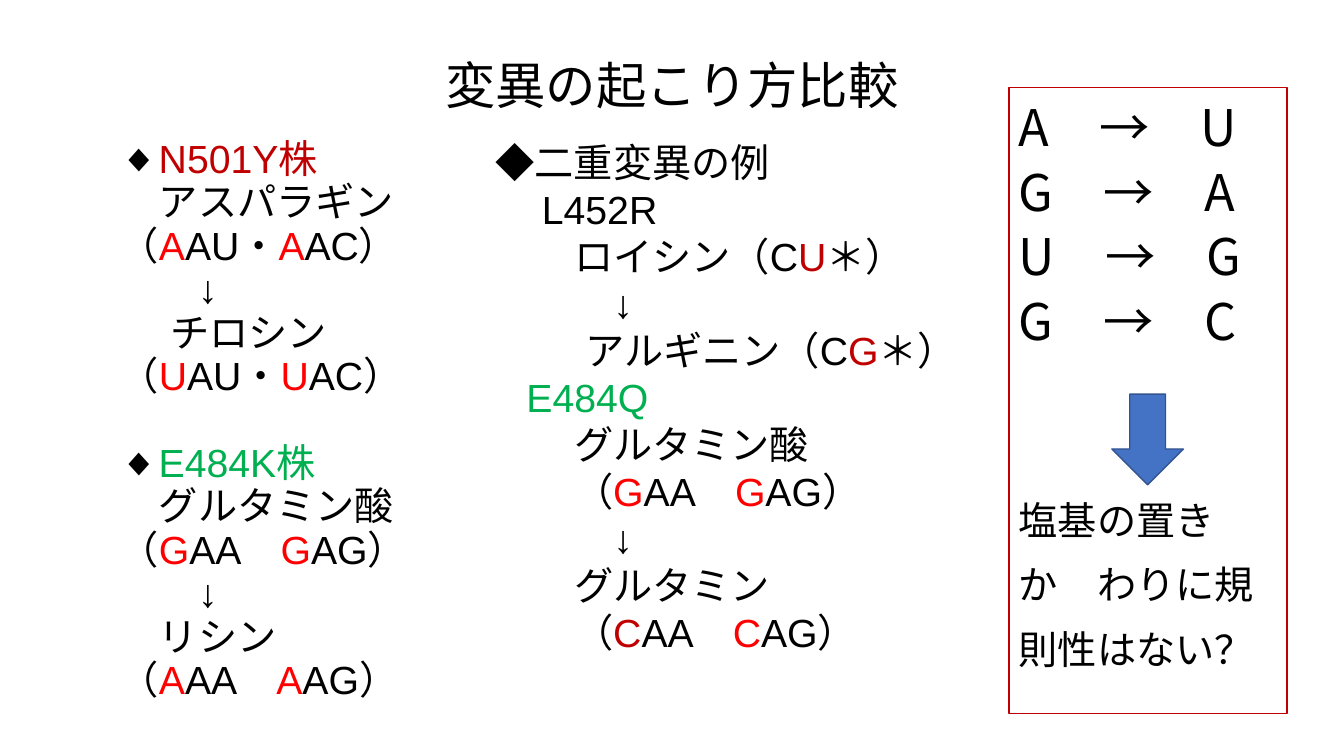
from pptx import Presentation
from pptx.dml.color import RGBColor
from pptx.enum.shapes import MSO_SHAPE
from pptx.enum.text import MSO_ANCHOR, PP_ALIGN
from pptx.oxml.ns import qn
from pptx.util import Pt

RECTANGLE, DOWN_ARROW = MSO_SHAPE.RECTANGLE, MSO_SHAPE.DOWN_ARROW
TOP, MIDDLE = MSO_ANCHOR.TOP, MSO_ANCHOR.MIDDLE
LEFT, CENTER = PP_ALIGN.LEFT, PP_ALIGN.CENTER
BLACK, RED, DARK_RED, GREEN = "000000", "FF0000", "C00000", "00B050"
BLUE, DARK_BLUE = "4472C4", "325491"
LATIN, JAPANESE = "Arial", "Noto Sans CJK JP"
EM = 28


def color(value):
    return RGBColor.from_string(value)


def add_span(para, text, value, size, font):
    span = para.add_run()
    span.text = text
    for name, setting in {"size": Pt(size), "name": font}.items():
        setattr(span.font, name, setting)
    span.font.color.rgb = color(value)
    east_asian = span.font._element.makeelement(qn("a:ea"), {"typeface": JAPANESE})
    span.font._element.find(qn("a:latin")).addnext(east_asian)


def fill_text(box, lines, size=EM, font=LATIN, anchor=TOP, align=LEFT, spacing=None):
    """Each line is (indent, spans, format); a span is a black string or (text, colour)."""
    frame = box.text_frame
    frame.word_wrap = True
    frame.vertical_anchor = anchor
    for index, (indent, spans, extra) in enumerate(lines):
        para = frame.add_paragraph() if index else frame.paragraphs[0]
        settings = {"alignment": align, "line_spacing": spacing,
                    "space_before": Pt(extra.get("before", 0))}
        for name, setting in settings.items():
            setattr(para, name, setting)
        if indent:
            para._p.get_or_add_pPr().set("marL", str(Pt(indent)))
        for span in spans:
            text, value = (span, BLACK) if isinstance(span, str) else span
            add_span(para, text, value, extra.get("size", size), font)


def add_text(page, left, top, width, height, lines, **style):
    box = page.shapes.add_textbox(Pt(left), Pt(top), Pt(width), Pt(height))
    fill_text(box, lines, **style)


def add_shape(page, kind, left, top, width, height, line, fill=None):
    shape = page.shapes.add_shape(kind, Pt(left), Pt(top), Pt(width), Pt(height))
    shape.shadow.inherit = False
    if fill:
        shape.fill.solid()
        shape.fill.fore_color.rgb = color(fill)
    else:
        shape.fill.background()
    shape.line.color.rgb = color(line)
    shape.line.width = Pt(1)
    return shape


def line(indent, *spans, **extra):
    return indent, spans, extra


def codons(base, first, second, indent=0, first_color=RED):
    """Two codons in brackets, with the changed base highlighted."""
    return line(indent, "（", (base, first_color), first, (base, RED), second + "）")


def single_variants():
    return [
        line(0, "◆", ("N501Y株", DARK_RED)),
        line(EM, "アスパラギン"),
        codons("A", "AU・", "AC"),
        line(2 * EM, "↓"),
        line(36, "チロシン"),
        codons("U", "AU・", "AC"),
        line(0, "◆", ("E484K株", GREEN), before=31),
        line(EM, "グルタミン酸"),
        codons("G", "AA　", "AG"),
        line(2 * EM, "↓"),
        line(EM, "リシン"),
        codons("A", "AA　", "AG"),
    ]


def double_variant():
    return [
        line(0, "◆二重変異の例"),
        line(33, "L452R"),
        line(2 * EM, "ロイシン（C", ("U", DARK_RED), "＊）"),
        line(3 * EM, "↓"),
        line(64, "アルギニン（C", ("G", DARK_RED), "＊）"),
        line(22, ("E484Q", GREEN)),
        line(2 * EM, "グルタミン酸"),
        codons("G", "AA　", "AG", 2 * EM),
        line(3 * EM, "↓"),
        line(2 * EM, "グルタミン"),
        codons("C", "AA　", "AG", 2 * EM, DARK_RED),
    ]


def substitutions():
    changes = [line(0, f"{old}　→　{new}") for old, new in ("AU", "GA", "UG", "GC")]
    question = "塩基の置きか　わりに規則性はない？"
    return changes + [line(0, question, size=EM, before=92)]


def main():
    deck = Presentation()
    deck.slide_width, deck.slide_height = Pt(960), Pt(540)
    page = deck.slides.add_slide(deck.slide_layouts[6])
    add_text(page, 66, 10.8, 828, 104.4, [line(0, "変異の起こり方比較")], size=36,
             font=JAPANESE, anchor=MIDDLE, align=CENTER, spacing=0.9)
    add_text(page, 78.5, 95, 304, 448, single_variants(), spacing=Pt(31))
    add_text(page, 347, 95, 356.4, 414.7, double_variant())
    summary = add_shape(page, RECTANGLE, 720.7, 62.6, 198.7, 447.1, DARK_RED)
    fill_text(summary, substitutions(), size=36, font=JAPANESE, spacing=Pt(46))
    add_shape(page, DOWN_ARROW, 794.2, 281.5, 51.1, 64.8, DARK_BLUE, BLUE)
    deck.save("out.pptx")


if __name__ == "__main__":
    main()
